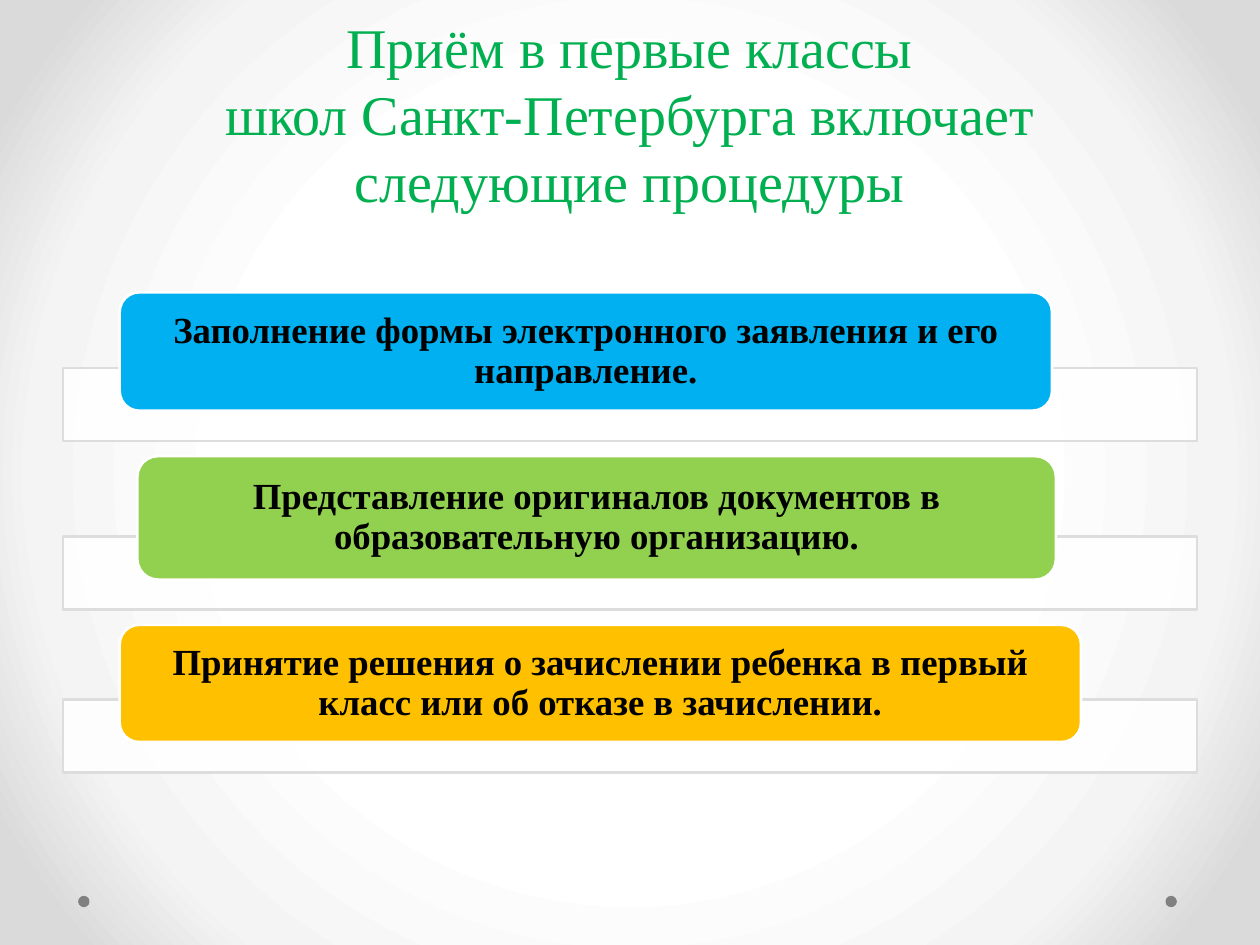
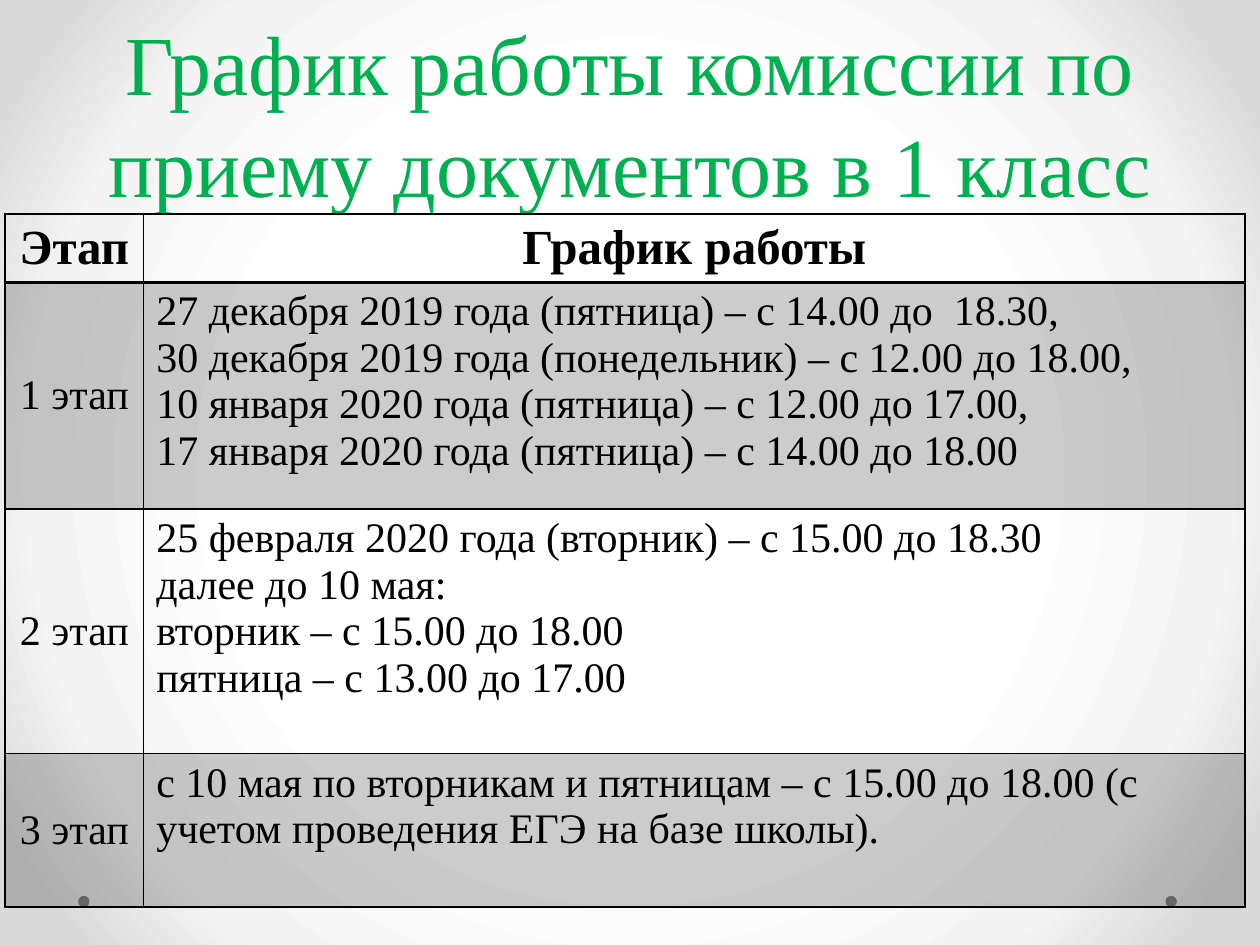
from lxml import etree
from pptx import Presentation
from pptx.dml.color import RGBColor
from pptx.enum import shapes, text
from pptx.oxml import parse_xml
from pptx.oxml.ns import nsdecls, qn
from pptx.util import Inches, Pt

FONT = "Times New Roman"
COLORS = {
    "title": "00B050",
    "text": "000000",
    "white": "FFFFFF",
    "band_line": "DDDDDD",
    "dot": "808080",
    "blue": "00B0F0",
    "green": "92D050",
    "amber": "FFC000",
}
BACKDROP_STOPS = [(50, "FFFFFF"), (76, "F4F4F4"), (92, "DADADA")]

# Card left, top, width, height; top of the band behind it; colour; wording
PROCEDURES = [
    ((0.95, 2.32, 7.4, 0.94), 2.92, "blue",
     "Заполнение формы электронного заявления и его направление."),
    ((1.09, 3.62, 7.29, 0.98), 4.26, "green",
     "Представление оригиналов документов в образовательную организацию."),
    ((0.95, 4.96, 7.63, 0.93), 5.55, "amber",
     "Принятие решения о зачислении ребенка в первый класс или об отказе в зачислении."),
]

SCHEDULE = [
    ("Этап", ["График работы"]),
    ("1 этап", ["27 декабря 2019 года (пятница) – с 14.00 до  18.30,",
                "30 декабря 2019 года (понедельник) – с 12.00 до 18.00,",
                "10 января 2020 года (пятница) – с 12.00 до 17.00,",
                "17 января 2020 года (пятница) – с 14.00 до 18.00"]),
    ("2 этап", ["25 февраля 2020 года (вторник) – с 15.00 до 18.30",
                "далее до 10 мая:",
                "вторник – с 15.00 до 18.00",
                "пятница – с 13.00 до 17.00"]),
    ("3 этап", ["с 10 мая по вторникам и пятницам – с 15.00 до 18.00 "
                "(с учетом проведения ЕГЭ на базе школы)."]),
]
STAGE_WIDTH, HOURS_WIDTH = 1.1, 8.74
ROW_HEIGHTS = [0.54, 1.8, 1.94, 1.22]


def rgb(name):
    return RGBColor.from_string(COLORS[name])


def add_run(paragraph, wording, size, color="text", bold=False):
    run = paragraph.add_run()
    run.text = wording
    run.font.name = FONT
    run.font.size = Pt(size)
    run.font.bold = bold
    run.font.color.rgb = rgb(color)


def set_opacity(fill_parent, percent):
    """Make the solid fill directly under an element partly transparent."""
    color = fill_parent.find(qn("a:solidFill"))[0]
    etree.SubElement(color, qn("a:alpha")).set("val", str(percent * 1000))


def add_box(slide, preset, box, fill, line=None):
    shape = slide.shapes.add_shape(preset, *map(Inches, box))
    shape.shadow.inherit = False
    shape.fill.solid()
    shape.fill.fore_color.rgb = rgb(fill)
    if line:
        shape.line.color.rgb = rgb(line)
        shape.line.width = Pt(1.5)
    else:
        shape.line.fill.background()
    return shape


def set_backdrop(master):
    """Give every slide the radial grey gradient."""
    master.background.fill.solid()
    stops = "".join(f'<a:gs pos="{pos * 1000}"><a:srgbClr val="{color}"/></a:gs>'
                    for pos, color in BACKDROP_STOPS)
    gradient = parse_xml(
        f'<a:gradFill {nsdecls("a")} rotWithShape="1"><a:gsLst>{stops}</a:gsLst>'
        '<a:path path="circle"><a:fillToRect l="50000" t="50000" r="50000" b="50000"/>'
        '</a:path></a:gradFill>')
    solid = master.element.find(".//" + qn("p:bgPr")).find(qn("a:solidFill"))
    solid.getparent().replace(solid, gradient)


def add_master_dots(master, slide):
    """Draw the two footer dots and hand them over to the master."""
    for left in (9.25, 0.62):
        dot = add_box(slide, shapes.MSO_SHAPE.OVAL, (left, 7.11, 0.09, 0.09), "dot")
        master.shapes.element.append(dot.element)


def set_title(slide, lines, size, spacing):
    title = slide.shapes.title
    title.left, title.top, title.width, title.height = map(Inches, (0.5, 0, 9, 1.75))
    frame = title.text_frame
    frame.word_wrap = True
    frame.auto_size = text.MSO_AUTO_SIZE.NONE
    frame.vertical_anchor = text.MSO_ANCHOR.BOTTOM
    paragraph = frame.paragraphs[0]
    paragraph.alignment = text.PP_ALIGN.CENTER
    paragraph.line_spacing = Pt(spacing)
    for index, line in enumerate(lines):
        if index:
            paragraph.add_line_break()
        add_run(paragraph, line, size, "title")


def add_procedure(slide, card_box, band_top, color, wording):
    band = add_box(slide, shapes.MSO_SHAPE.RECTANGLE, (0.5, band_top, 9, 0.58),
                   "white", "band_line")
    set_opacity(band.element.spPr, 90)
    card = add_box(slide, shapes.MSO_SHAPE.ROUNDED_RECTANGLE, card_box, color, "white")
    frame = card.text_frame
    frame.word_wrap = True
    frame.vertical_anchor = text.MSO_ANCHOR.MIDDLE
    frame.margin_left = frame.margin_right = Inches(0.28)
    frame.margin_top = frame.margin_bottom = 0
    paragraph = frame.paragraphs[0]
    paragraph.alignment = text.PP_ALIGN.CENTER
    paragraph.line_spacing = 0.9
    add_run(paragraph, wording, 21, bold=True)


def set_borders(cell, top, bottom):
    properties = cell._tc.get_or_add_tcPr()
    for side, width in (("L", 1), ("R", 1), ("T", top), ("B", bottom)):
        properties.append(parse_xml(
            f'<a:ln{side} {nsdecls("a")} w="{Pt(width)}"><a:solidFill>'
            f'<a:srgbClr val="{COLORS["text"]}"/></a:solidFill></a:ln{side}>'))


def fill_cell(cell, lines, header, centered, shaded):
    for index, line in enumerate(lines):
        frame = cell.text_frame
        paragraph = frame.add_paragraph() if index else frame.paragraphs[0]
        paragraph.alignment = text.PP_ALIGN.CENTER if centered else text.PP_ALIGN.LEFT
        add_run(paragraph, line, 28 if header else 24, bold=header)
    cell.vertical_anchor = text.MSO_ANCHOR.MIDDLE if centered else text.MSO_ANCHOR.TOP
    if shaded:
        cell.fill.solid()
        cell.fill.fore_color.rgb = rgb("text")
        set_opacity(cell._tc.tcPr, 20)
    else:
        cell.fill.background()


def add_schedule(slide):
    frame = slide.shapes.add_table(
        len(SCHEDULE), 2, Inches(0.04), Inches(1.7),
        Inches(STAGE_WIDTH + HOURS_WIDTH), Inches(sum(ROW_HEIGHTS)))
    table = frame.table
    table.first_row = table.horz_banding = False
    for column, width in zip(table.columns, (STAGE_WIDTH, HOURS_WIDTH)):
        column.width = Inches(width)
    for index, (stage, hours) in enumerate(SCHEDULE):
        table.rows[index].height = Inches(ROW_HEIGHTS[index])
        header = index == 0
        for column, lines in enumerate(([stage], hours)):
            cell = table.cell(index, column)
            set_borders(cell, top=2 if index == 1 else 1, bottom=2 if header else 1)
            fill_cell(cell, lines, header, centered=header or column == 0,
                      shaded=index % 2 == 1)


def main():
    deck = Presentation()
    deck.slide_width, deck.slide_height = Inches(10), Inches(7.5)
    title_only = deck.slide_layouts[5]
    set_backdrop(deck.slide_master)

    procedures = deck.slides.add_slide(title_only)
    add_master_dots(deck.slide_master, procedures)
    set_title(procedures, ["Приём в первые классы",
                           "школ Санкт‑Петербурга включает",
                           "следующие процедуры"], 32, 38.5)
    for procedure in PROCEDURES:
        add_procedure(procedures, *procedure)

    schedule = deck.slides.add_slide(title_only)
    set_title(schedule, ["График работы комиссии по приему документов в 1 класс"], 48, 58)
    add_schedule(schedule)

    deck.save("out.pptx")


if __name__ == "__main__":
    main()
